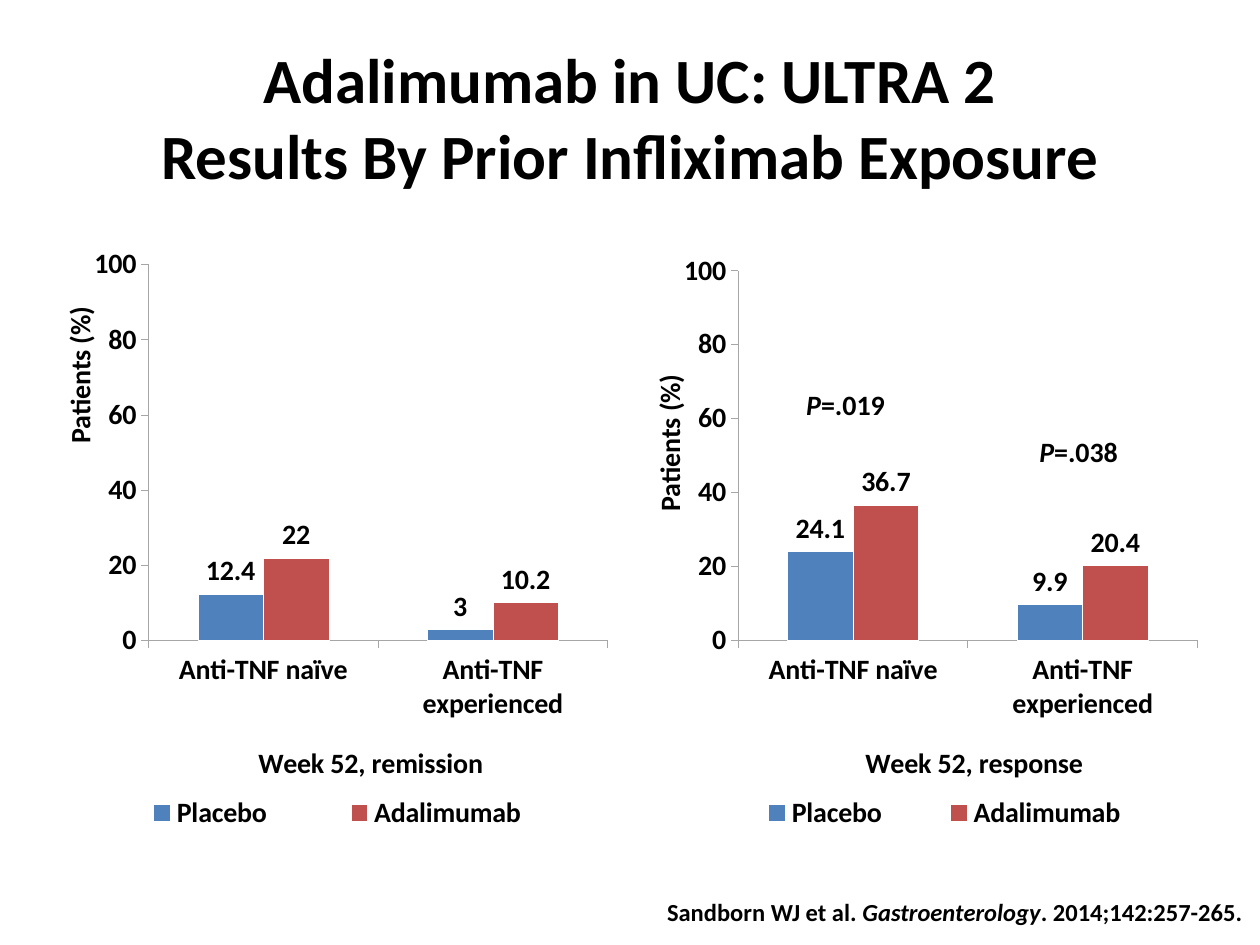
from lxml.etree import SubElement
from pptx import Presentation
from pptx.chart.data import CategoryChartData
from pptx.dml.color import RGBColor
from pptx.enum.chart import XL_CHART_TYPE as ChartType
from pptx.enum.chart import XL_LABEL_POSITION as LabelPosition
from pptx.enum.chart import XL_LEGEND_POSITION as LegendPosition
from pptx.enum.chart import XL_TICK_MARK as TickMark
from pptx.enum.text import MSO_ANCHOR as Anchor
from pptx.enum.text import MSO_AUTO_SIZE as AutoSize
from pptx.enum.text import PP_ALIGN as Align
from pptx.oxml.ns import qn
from pptx.util import Pt

BLACK = RGBColor(0x00, 0x00, 0x00)
WHITE = RGBColor(0xFF, 0xFF, 0xFF)
GREY = RGBColor(0xA6, 0xA6, 0xA6)
BLUE = RGBColor(0x4F, 0x81, 0xBD)
RED = RGBColor(0xC0, 0x50, 0x4D)

GROUPS = ["Anti-TNF naïve", "Anti-TNF experienced"]
ARM_COLORS = {"Placebo": BLUE, "Adalimumab": RED}


def style_font(font, size, italic=None):
    font.name = "Calibri"
    font.size = Pt(size)
    font.bold = True
    font.italic = italic
    font.color.rgb = BLACK


def set_layout(parent, index, inner=False, **fractions):
    """Give a chart part a manual layout in fractions of the chart (x, y, w, h)."""
    for old in parent.findall(qn("c:layout")):
        parent.remove(old)
    layout = SubElement(parent, qn("c:layout"))
    parent.insert(index, layout)
    manual = SubElement(layout, qn("c:manualLayout"))
    if inner:
        SubElement(manual, qn("c:layoutTarget"), val="inner")
    for edge in ("x", "y"):
        SubElement(manual, qn(f"c:{edge}Mode"), val="edge")
    for key in ("x", "y", "w", "h"):
        if key in fractions:
            SubElement(manual, qn(f"c:{key}"), val=str(fractions[key]))


def style_axis(axis, title, x, y):
    axis.has_major_gridlines = False
    axis.major_tick_mark = TickMark.OUTSIDE
    axis.minor_tick_mark = TickMark.NONE
    axis.format.line.color.rgb = GREY
    axis.format.line.width = Pt(0.5)
    style_font(axis.tick_labels.font, 16)
    axis.has_title = True
    frame = axis.axis_title.text_frame
    frame.text = title
    style_font(frame.paragraphs[0].runs[0].font, 16)
    set_layout(axis.axis_title._element, 1, x=x, y=y)


def style_series(series):
    series.format.fill.solid()
    series.format.fill.fore_color.rgb = ARM_COLORS[series.name]
    series.format.line.color.rgb = WHITE
    series.format.line.width = Pt(0.25)
    series.invert_if_negative = False
    labels = series.data_labels
    labels.show_value = True
    labels.position = LabelPosition.OUTSIDE_END
    style_font(labels.font, 16)


def add_outcome_chart(slide, left, outcome, results, plot_top,
                      outcome_at, patients_at, legend_span):
    data = CategoryChartData()
    data.categories = GROUPS
    for arm, values in zip(ARM_COLORS, results):
        data.add_series(arm, values)
    chart = slide.shapes.add_chart(
        ChartType.COLUMN_CLUSTERED, Pt(left), Pt(126.7), Pt(332), Pt(352), data).chart
    style_font(chart.font, 18)
    chart.has_title = False

    style_axis(chart.category_axis, outcome, *outcome_at)
    style_axis(chart.value_axis, "Patients (%)", *patients_at)
    chart.value_axis.minimum_scale = 0
    chart.value_axis.maximum_scale = 100
    chart.value_axis.major_unit = 20

    plot = chart.plots[0]
    plot.gap_width = 150
    plot.overlap = 0
    plot.vary_by_categories = False
    for series in plot.series:
        style_series(series)
    plot_area = chart._chartSpace.find(".//" + qn("c:plotArea"))
    set_layout(plot_area, 0, inner=True,
               x=0.18, y=plot_top, w=0.79, h=round(0.68 - plot_top, 2))

    chart.has_legend = True
    chart.legend.position = LegendPosition.BOTTOM
    chart.legend.include_in_layout = False
    style_font(chart.legend.font, 16)
    legend_x, legend_width = legend_span
    set_layout(chart.legend._element, 1, x=legend_x, y=0.92, w=legend_width, h=0.08)


def add_runs(paragraph, pieces, size):
    """Add (text, italic) pieces to the paragraph."""
    for text, italic in pieces:
        run = paragraph.add_run()
        run.text = text
        style_font(run.font, size, italic)


def add_p_value(slide, left, top, value):
    box = slide.shapes.add_textbox(Pt(left), Pt(top), Pt(60.5), Pt(26.6))
    box.text_frame.word_wrap = False
    box.text_frame.auto_size = AutoSize.SHAPE_TO_FIT_TEXT
    add_runs(box.text_frame.paragraphs[0], [("P", True), (value, False)], 16)


def add_citation(slide):
    frame = slide.shapes.add_textbox(Pt(45.4), Pt(512.6), Pt(664.6), Pt(17)).text_frame
    frame.word_wrap = True
    frame.auto_size = AutoSize.SHAPE_TO_FIT_TEXT
    frame.vertical_anchor = Anchor.BOTTOM
    frame.margin_left = frame.margin_right = frame.margin_top = frame.margin_bottom = 0
    citation = frame.paragraphs[0]
    citation.alignment = Align.RIGHT
    add_runs(citation, [("Sandborn WJ et al. ", False), ("Gastroenterology", True),
                        (". 2014;142:257-265.", False)], 14)


def set_title(slide, text):
    title = slide.shapes.title
    title.left, title.top, title.width, title.height = Pt(36), Pt(21.6), Pt(648), Pt(90)
    title.text_frame.text = text
    title.text_frame.vertical_anchor = Anchor.MIDDLE
    heading = title.text_frame.paragraphs[0]
    heading.alignment = Align.CENTER
    for run in heading.runs:
        style_font(run.font, 36)


def main():
    prs = Presentation()
    prs.slide_width, prs.slide_height = Pt(720), Pt(540)
    slide = prs.slides.add_slide(prs.slide_layouts[5])
    set_title(slide, "Adalimumab in UC: ULTRA 2\vResults By Prior Infliximab Exposure")
    add_outcome_chart(slide, 25.2, "Week 52, remission", [(12.4, 3), (22, 10.2)],
                      plot_top=0.07, outcome_at=(0.36, 0.84),
                      patients_at=(0.02, 0.13), legend_span=(0.06, 0.89))
    add_outcome_chart(slide, 362.2, "Week 52, response", [(24.1, 9.9), (36.7, 20.4)],
                      plot_top=0.08, outcome_at=(0.39, 0.84),
                      patients_at=(0.02, 0.24), legend_span=(0.13, 0.81))
    add_p_value(slide, 453.6, 218.2, "=.019")
    add_p_value(slide, 586.8, 244.8, "=.038")
    add_citation(slide)
    prs.save("out.pptx")


if __name__ == "__main__":
    main()
